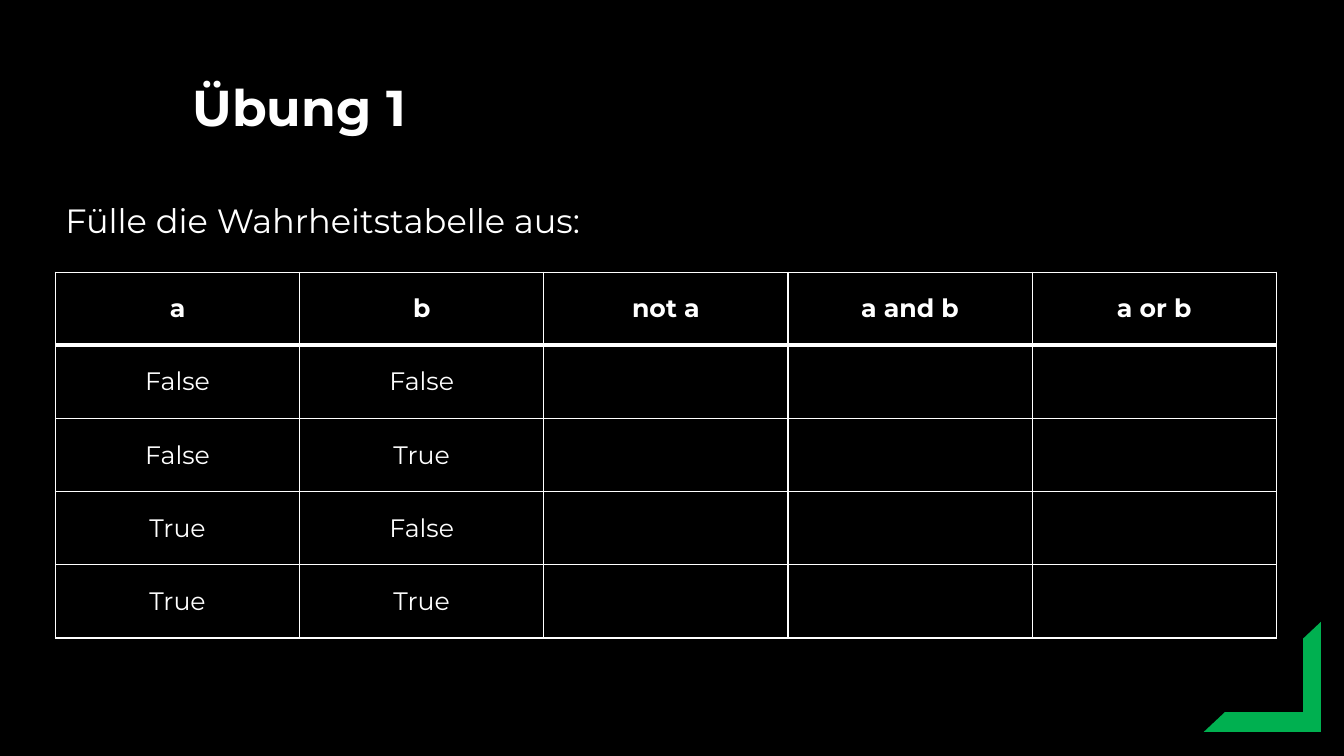
from dataclasses import dataclass

from lxml import etree
from pptx import Presentation
from pptx.dml.color import RGBColor
from pptx.enum import shapes, text
from pptx.oxml import ns
from pptx.util import Inches, Pt


@dataclass(frozen=True)
class Theme:
    font: str = "Montserrat"
    background: RGBColor = RGBColor(0, 0, 0)
    foreground: RGBColor = RGBColor(255, 255, 255)
    accent: RGBColor = RGBColor(0x00, 0xB0, 0x50)
    title_size: int = 36
    body_size: int = 24
    table_size: int = 18
    thin_line: int = 1
    header_line: int = 3


theme = Theme()


def style_paragraph(para, size, bold=False):
    para.font.name = theme.font
    para.font.size = Pt(size)
    para.font.bold = bold
    para.font.color.rgb = theme.foreground


def set_borders(cell, top, bottom):
    """Draw all four sides of a cell; top and bottom are widths in points."""
    properties = cell._tc.get_or_add_tcPr()
    widths = {"lnL": theme.thin_line, "lnR": theme.thin_line, "lnT": top, "lnB": bottom}
    for position, (side, width) in enumerate(widths.items()):
        line = etree.Element(ns.qn(f"a:{side}"), w=str(Pt(width)))
        fill = etree.SubElement(line, ns.qn("a:solidFill"))
        etree.SubElement(fill, ns.qn("a:srgbClr"), val=str(theme.foreground))
        properties.insert(position, line)


deck = Presentation()
deck.slide_width = Inches(13.33)
deck.slide_height = Inches(7.5)
page = deck.slides.add_slide(deck.slide_layouts[6])
page.background.fill.solid()
page.background.fill.fore_color.rgb = theme.background

# Corner ornament
corner = page.shapes.add_shape(
    shapes.MSO_SHAPE.HALF_FRAME, Inches(11.94), Inches(6.17), Inches(1.16), Inches(1.09)
)
corner.rotation = 180
corner.adjustments[0] = 0.18
corner.adjustments[1] = 0.16
corner.fill.solid()
corner.fill.fore_color.rgb = theme.accent
corner.line.fill.background()
corner.shadow.inherit = False

# Title and task
headings = [
    ("Übung 1", 1.81, 0.77, 10.85, 0.71, theme.title_size, True),
    ("Fülle die Wahrheitstabelle aus:", 0.55, 1.98, 12.11, 0.6, theme.body_size, False),
]
for wording, left, top, width, height, size, bold in headings:
    box = page.shapes.add_textbox(Inches(left), Inches(top), Inches(width), Inches(height))
    box.text_frame.word_wrap = True
    para = box.text_frame.paragraphs[0]
    para.text = wording
    para.line_spacing = 0.9
    style_paragraph(para, size, bold)

# Truth table
header = ["a", "b", "not a", "a and b", "a or b"]
inputs = [[str(a), str(b), "", "", ""] for a in (False, True) for b in (False, True)]
rows = [header, *inputs]
table = page.shapes.add_table(
    len(rows), len(header), Inches(0.55), Inches(2.7), Inches(12.11), Inches(3.63)
).table
table.horz_banding = False

for row_index, row in enumerate(rows):
    for column_index, wording in enumerate(row):
        cell = table.cell(row_index, column_index)
        cell.fill.background()
        cell.vertical_anchor = text.MSO_ANCHOR.MIDDLE
        para = cell.text_frame.paragraphs[0]
        para.text = wording
        para.alignment = text.PP_ALIGN.CENTER
        style_paragraph(para, theme.table_size, bold=row_index == 0)
        set_borders(
            cell,
            top=theme.header_line if row_index == 1 else theme.thin_line,
            bottom=theme.header_line if row_index == 0 else theme.thin_line,
        )

deck.save("out.pptx")
